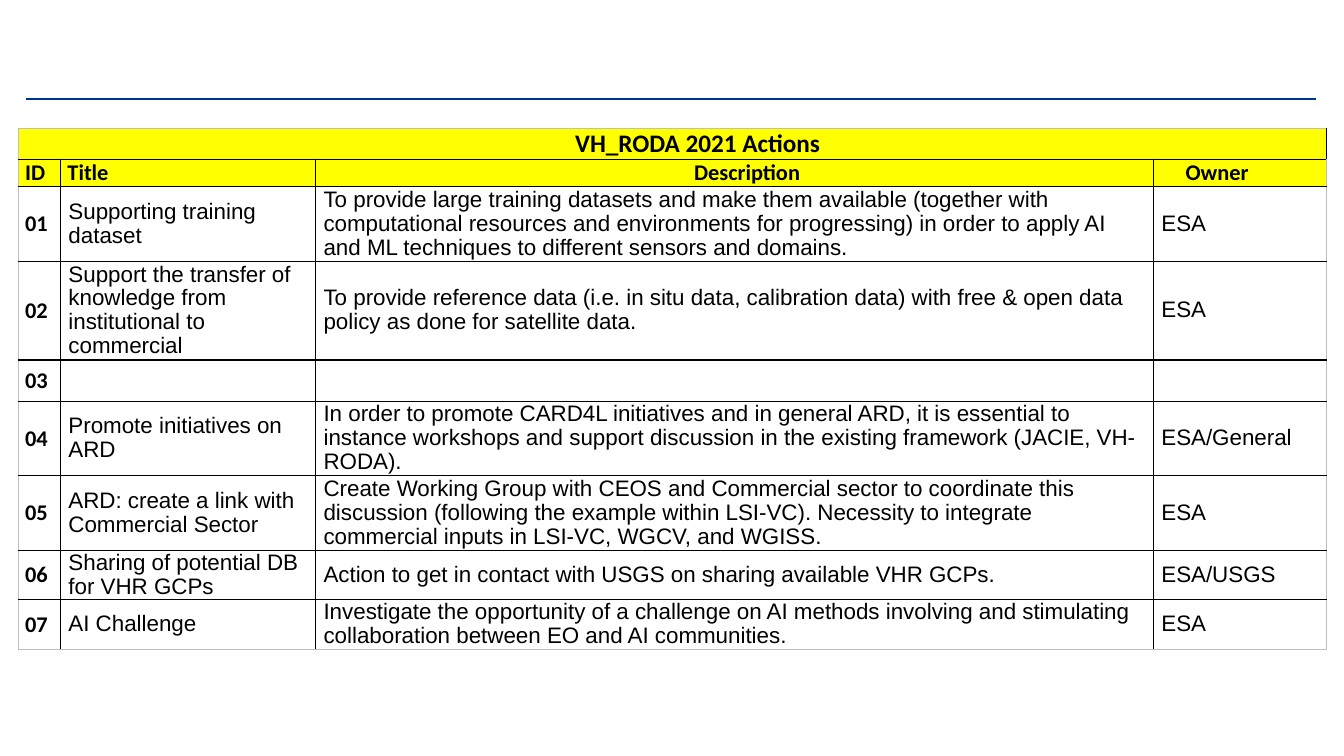
from lxml import etree
from pptx import Presentation
from pptx.dml.color import RGBColor
from pptx.enum.shapes import MSO_CONNECTOR
from pptx.enum.text import MSO_ANCHOR, PP_ALIGN
from pptx.oxml.ns import qn
from pptx.util import Inches, Pt


def rgb(value):
    return RGBColor.from_string(value)


def add_border(cell, side, color, width):
    ln = etree.SubElement(cell._tc.get_or_add_tcPr(), qn("a:" + side), w=str(Pt(width)))
    fill = etree.SubElement(ln, qn("a:solidFill"))
    etree.SubElement(fill, qn("a:srgbClr"), val=color)


prs = Presentation()
prs.slide_width, prs.slide_height = Inches(13.33), Inches(7.5)
s = prs.slides.add_slide(prs.slide_layouts[6])

# Rule under the title area
rule = s.shapes.add_connector(MSO_CONNECTOR.STRAIGHT, Inches(0.26), Inches(0.98),
                              Inches(13.05), Inches(0.98))
rule.line.color.rgb = rgb("00338D")
rule.line.width = Pt(1.5)
etree.SubElement(rule._element.spPr, qn("a:effectLst"))

# Table content
rows = [
    ("VH_RODA 2021 Actions", "", "", ""),
    ("ID", "Title", "Description", "Owner"),
    ("01", "Supporting training dataset",
     "To provide large training datasets and make them available (together with "
     "computational resources and environments for progressing) in order to apply AI "
     "and ML techniques to different sensors and domains.", "ESA"),
    ("02", "Support the transfer of knowledge from institutional to commercial",
     "To provide reference data (i.e. in situ data, calibration data) with free & open "
     "data policy as done for satellite data.", "ESA"),
    ("03", "", "", ""),
    ("04", "Promote initiatives on ARD",
     "In order to promote CARD4L initiatives and in general ARD, it is essential to "
     "instance workshops and support discussion in the existing framework (JACIE, "
     "VH-RODA).", "ESA/General"),
    ("05", "ARD: create a link with Commercial Sector",
     "Create Working Group with CEOS and Commercial sector to coordinate this "
     "discussion (following the example within LSI-VC). Necessity to integrate "
     "commercial inputs in LSI-VC, WGCV, and WGISS.", "ESA"),
    ("06", "Sharing of potential DB for VHR GCPs",
     "Action to get in contact with USGS on sharing available VHR GCPs.", "ESA/USGS"),
    ("07", "AI Challenge",
     "Investigate the opportunity of a challenge on AI methods involving and "
     "stimulating collaboration between EO and AI communities.", "ESA"),
]
col_widths = [0.42, 2.53, 8.31, 1.72]
row_heights = [0.31, 0.27, 0.74, 0.98, 0.41, 0.74, 0.74, 0.49, 0.49]
header_aligns = [PP_ALIGN.LEFT, PP_ALIGN.JUSTIFY, PP_ALIGN.CENTER, PP_ALIGN.JUSTIFY]
header_indents = [0.01, 0.01, 0.25, 0.25]

# Table frame
table = s.shapes.add_table(len(rows), len(col_widths), Inches(0.18), Inches(1.27),
                           Inches(sum(col_widths)), Inches(sum(row_heights))).table
table.first_row = table.horz_banding = False
for col, width in zip(table.columns, col_widths):
    col.width = Inches(width)
for row, height in zip(table.rows, row_heights):
    row.height = Inches(height)
table.cell(0, 0).merge(table.cell(0, 3))

# Cells: yellow heading rows, bold IDs, plain body text
for i, texts in enumerate(rows):
    for j, text in enumerate(texts):
        cell = table.cell(i, j)
        heading = i < 2
        edges = {"lnL": j == 0, "lnR": j == 3, "lnT": i == 0, "lnB": i == len(rows) - 1}
        for side, outer in edges.items():
            add_border(cell, side, "BFBFBF" if outer else "000000", 0.5 if outer else 1)
        if heading:
            cell.fill.solid()
            cell.fill.fore_color.rgb = rgb("FFFF00")
        else:
            cell.fill.background()
        cell.margin_left = cell.margin_right = Inches(0.07)
        cell.margin_top = cell.margin_bottom = 0
        cell.vertical_anchor = MSO_ANCHOR.TOP if heading else MSO_ANCHOR.MIDDLE
        if not text:
            continue

        p = cell.text_frame.paragraphs[0]
        indent = 0.01
        if i == 0:
            p.alignment, indent = PP_ALIGN.CENTER, 0.5
        elif i == 1:
            p.alignment, indent = header_aligns[j], header_indents[j]
        p._p.get_or_add_pPr().set("marL", str(Inches(indent)))
        if i > 0 and (j == 0 or (heading and j == 1)):
            p._p.get_or_add_pPr().set("indent", str(-Inches(indent)))
        bold = heading or j == 0
        if not bold:
            p.line_spacing = 0.96
        r = p.add_run()
        r.text = text
        r.font.name = "Calibri" if bold else "Arial"
        r.font.size = Pt(18 if i == 0 else 16)
        r.font.bold = bold
        r.font.color.rgb = rgb("000000")

prs.save("out.pptx")
